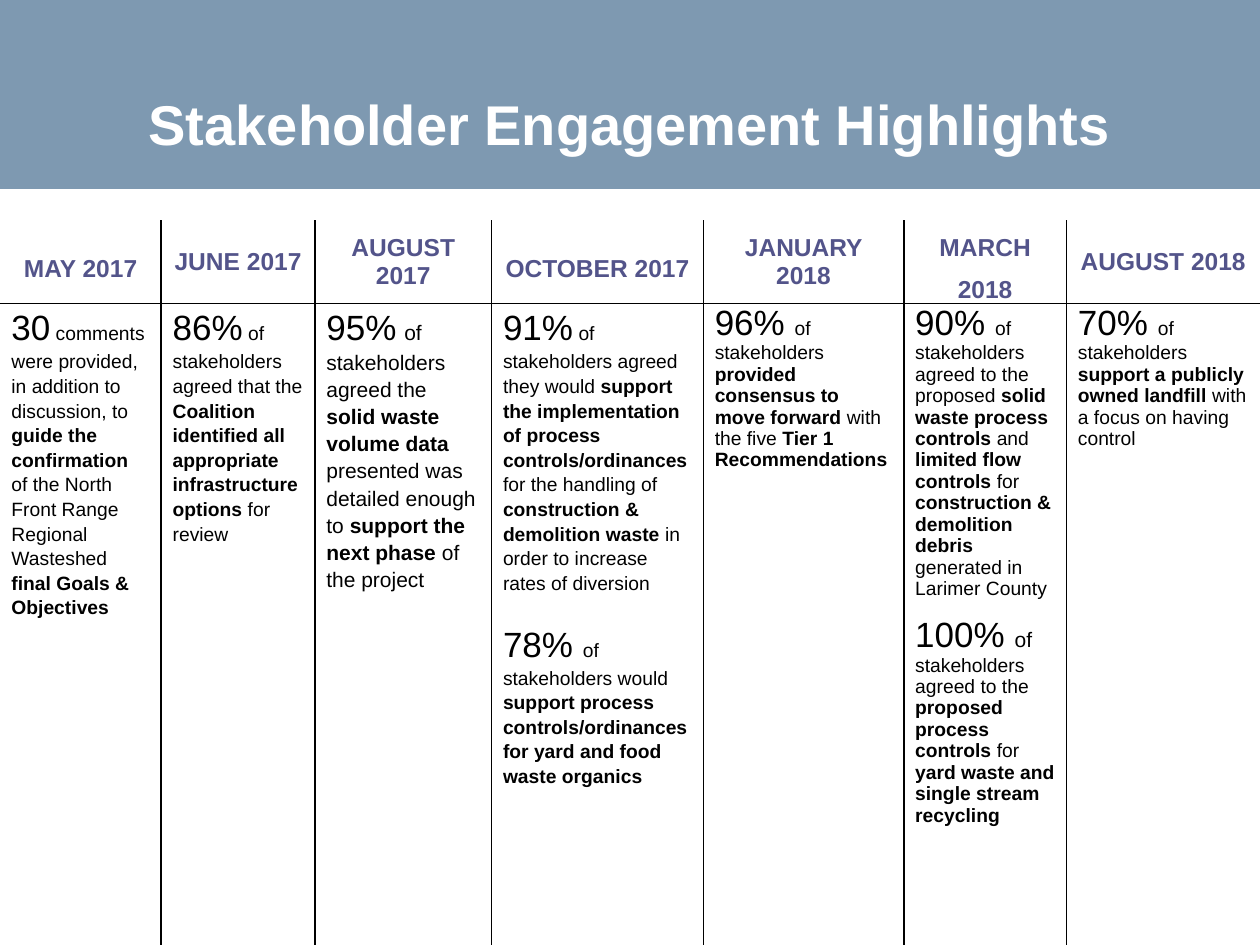
"""Build the stakeholder engagement highlights slide."""
from lxml.etree import SubElement
from pptx import Presentation
from pptx.dml.color import RGBColor
from pptx.enum.shapes import MSO_SHAPE
from pptx.enum.text import MSO_ANCHOR as Anchor, MSO_AUTO_SIZE as AutoSize, PP_ALIGN as Align
from pptx.oxml.ns import qn
from pptx.util import Cm, Pt

FONT = "Arial"
BAND, HEADING, BLACK, WHITE = "7E99B1", "53548A", "000000", "FFFFFF"
TITLE = "Stakeholder Engagement Highlights"
ROW_HEIGHTS = (1.65, 13.39)

# Each finding: figure, lead-in, lead-in size, text with **bold** parts, text size, space before
MILESTONES = [
    ("MAY 2017", 3.25, 1.5, 1.15, [
        ("30", " comments ", 11, "were provided, in addition to discussion, to **guide the confirmation** of "
         "the North Front Range Regional Wasteshed **final Goals & Objectives**", 11, 0)]),
    ("JUNE 2017", 3.1, 1, 1.15, [
        ("86%", " of ", 11, "stakeholders agreed that the **Coalition identified all appropriate "
         "infrastructure options** for review", 11, 0)]),
    ("AUGUST 2017", 3.56, 1, 1.15, [
        ("95%", " ", 16, "of stakeholders agreed the **solid waste volume data** presented was detailed "
         "enough to **support the next phase** of the project", 12, 0)]),
    ("OCTOBER 2017", 4.27, 1.5, 1.15, [
        ("91%", " of ", 11, "stakeholders agreed they would **support the implementation of process "
         "controls/ordinances** for the handling of **construction & demolition waste **in order to "
         "increase rates of diversion", 11, 0),
        ("78% ", "of ", 11, "stakeholders would **support process controls/ordinances for yard and food "
         "waste organics**", 11, 14.5)]),
    ("JANUARY 2018", 4.04, 1, 1, [
        ("96% ", "of ", 11, "stakeholders **provided consensus to move forward **with the five "
         "**Tier 1 Recommendations**", 11, 0)]),
    ("MARCH 2018", 3.28, 1.5, 1, [
        ("90% ", "of ", 11, "stakeholders agreed to the proposed **solid waste process controls **and"
         "** limited flow controls **for **construction & demolition debris **generated in Larimer County",
         11, 0),
        ("100% ", "of ", 12, "stakeholders agreed to the **proposed process controls **for **yard waste and "
         "single stream recycling**", 11, 9.2)]),
    ("AUGUST 2018", 3.9, 1, 1, [
        ("70% ", "of ", 11, "stakeholders **support a publicly owned landfill **with a focus on having "
         "control", 11, 0)]),
]


def rgb(value):
    """Turn a hex string into a colour."""
    return RGBColor.from_string(value)


def add_run(paragraph, text, size, color, bold=False):
    """Append one formatted run."""
    run = paragraph.add_run()
    run.text = text
    font = run.font
    font.name, font.size, font.bold = FONT, Pt(size), bold
    font.color.rgb = rgb(color)


def format_cell(cell, anchor, sides):
    """Set margins, anchor, empty fill and 1 pt black borders on the given sides."""
    cell.margin_left = cell.margin_right = Cm(0.23)
    cell.margin_top = cell.margin_bottom = 0
    cell.vertical_anchor = anchor
    properties = cell._tc.get_or_add_tcPr()
    for side in sides:
        line = SubElement(properties, qn(f"a:ln{side}"), w=str(Pt(1)))
        fill = SubElement(line, qn("a:solidFill"))
        SubElement(fill, qn("a:srgbClr"), val=BLACK)
    cell.fill.background()


def write_finding(paragraph, finding, spacing):
    """Write the large figure, its lead-in and the text with bold parts."""
    figure, lead, lead_size, text, size, before = finding
    paragraph.line_spacing = spacing
    paragraph.space_before = Pt(before)
    add_run(paragraph, figure, 20, BLACK)
    add_run(paragraph, lead, lead_size, BLACK)
    for index, part in enumerate(text.split("**")):
        if part:
            add_run(paragraph, part, size, BLACK, index % 2 == 1)


def add_title(slide):
    """Add the band and put the title on it."""
    title = slide.shapes.title
    band = slide.shapes.add_shape(MSO_SHAPE.RECTANGLE, 0, 0, Cm(25.4), Cm(3.81))
    band.shadow.inherit = False
    band.fill.solid()
    band.fill.fore_color.rgb = rgb(BAND)
    band.line.fill.background()
    title.element.addprevious(band.element)

    title.left, title.top, title.width, title.height = 0, Cm(0.76), Cm(25.4), Cm(2.41)
    frame = title.text_frame
    frame.auto_size = AutoSize.NONE
    frame.word_wrap = True
    frame.vertical_anchor = Anchor.BOTTOM
    frame.margin_left = frame.margin_right = Cm(1.02)
    frame.margin_top = frame.margin_bottom = 0
    heading = frame.paragraphs[0]
    heading.alignment = Align.CENTER
    heading.line_spacing = Pt(34)
    add_run(heading, TITLE, 32, WHITE, True)


def add_timeline(slide):
    """Add the table with one column per milestone."""
    table = slide.shapes.add_table(2, len(MILESTONES), 0, Cm(4.45), Cm(25.4), Cm(sum(ROW_HEIGHTS))).table
    table.first_row = table.horz_banding = False
    for row, height in zip(table.rows, ROW_HEIGHTS):
        row.height = Cm(height)
    last = len(MILESTONES) - 1
    for index, (month, width, month_spacing, spacing, findings) in enumerate(MILESTONES):
        table.columns[index].width = Cm(width)
        sides = ("L" if index else "") + ("R" if index < last else "")
        header, body = table.cell(0, index), table.cell(1, index)
        format_cell(header, Anchor.MIDDLE, sides + "B")
        format_cell(body, Anchor.TOP, sides + "T")
        heading = header.text_frame.paragraphs[0]
        heading.alignment = Align.CENTER
        heading.line_spacing = month_spacing
        add_run(heading, month, 14, HEADING, True)
        frame = body.text_frame
        for order, finding in enumerate(findings):
            paragraph = frame.add_paragraph() if order else frame.paragraphs[0]
            write_finding(paragraph, finding, spacing)


def main():
    """Create and save the presentation."""
    deck = Presentation()
    deck.slide_width, deck.slide_height = Cm(25.4), Cm(19.05)
    slide = deck.slides.add_slide(deck.slide_layouts[5])
    add_title(slide)
    add_timeline(slide)
    deck.save("out.pptx")


if __name__ == "__main__":
    main()
